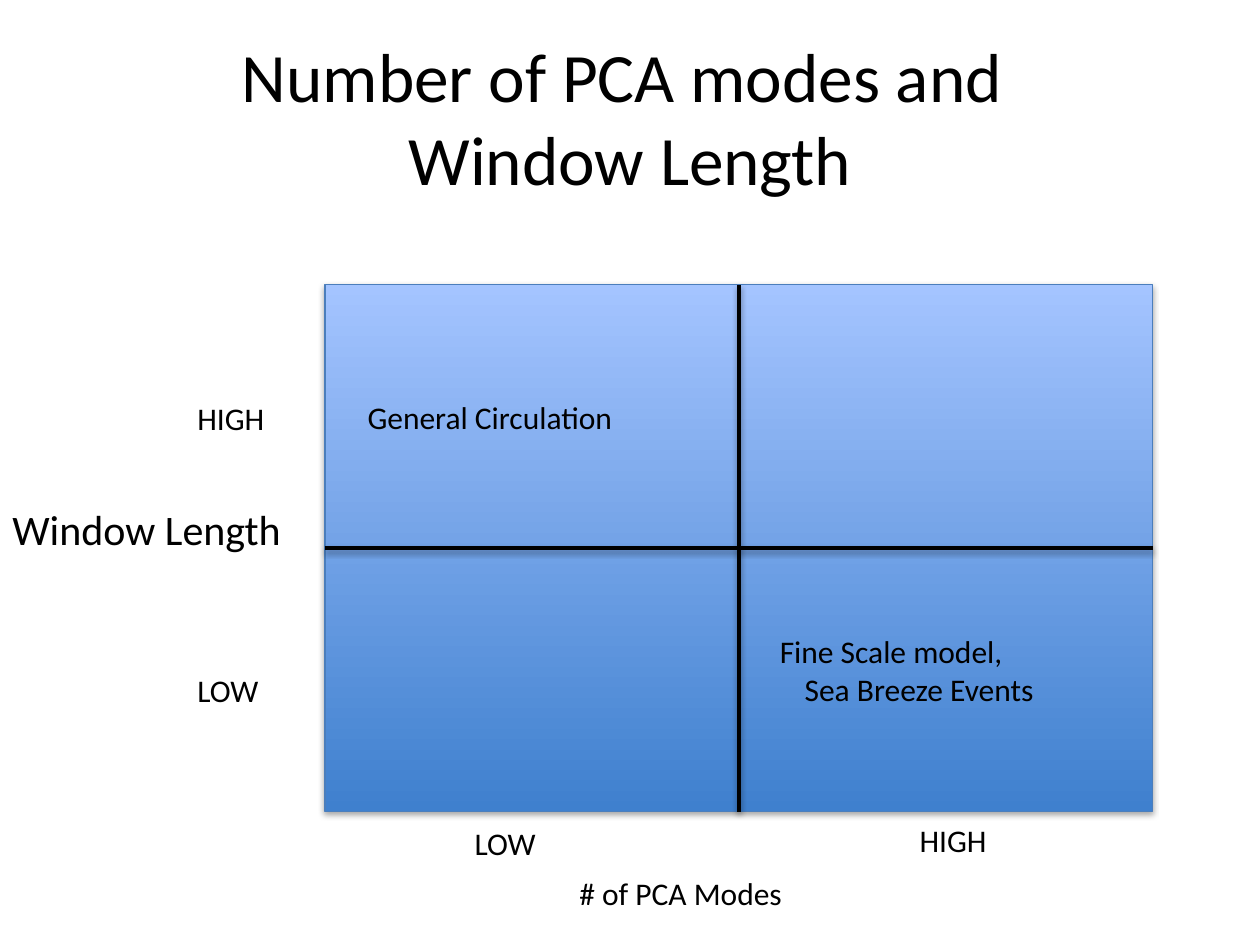
from dataclasses import dataclass

from lxml import etree
from pptx import Presentation
from pptx.dml.color import RGBColor
from pptx.enum.shapes import MSO_CONNECTOR, MSO_SHAPE
from pptx.enum.text import MSO_ANCHOR, MSO_AUTO_SIZE, PP_ALIGN
from pptx.oxml.ns import qn
from pptx.util import Cm, Pt

STRAIGHT = MSO_CONNECTOR.STRAIGHT
RECTANGLE = MSO_SHAPE.RECTANGLE
MIDDLE = MSO_ANCHOR.MIDDLE
FIT_TEXT = MSO_AUTO_SIZE.SHAPE_TO_FIT_TEXT
LEFT, CENTER = PP_ALIGN.LEFT, PP_ALIGN.CENTER
TOP_SIDE, LEFT_SIDE, BOTTOM_SIDE, RIGHT_SIDE = range(4)


@dataclass(frozen=True)
class Theme:
    font: str = "Calibri"
    ink: RGBColor = RGBColor(0x00, 0x00, 0x00)
    grid_bottom: RGBColor = RGBColor(0x3F, 0x80, 0xCE)
    grid_top: RGBColor = RGBColor(0xA4, 0xC4, 0xFF)
    grid_edge: RGBColor = RGBColor(0x4B, 0x7E, 0xBC)
    title: float = 39.6
    axis: float = 24
    label: float = 18


THEME = Theme()

# Left, top, width, height in cm
GRID = (6.55, 5.74, 16.69, 10.62)

# Text, left, top, width, height in cm, type size
LABELS = [
    ("# of PCA Modes", 11.43, 17.5, 4.65, 1.02, THEME.label),
    ("Window Length", 0, 10.03, 5.99, 1.27, THEME.axis),
    ("LOW", 9.32, 16.48, 1.78, 1.02, THEME.label),
    ("HIGH", 18.29, 16.43, 1.88, 1.02, THEME.label),
    ("LOW", 3.73, 13.41, 1.78, 1.02, THEME.label),
    ("HIGH", 3.73, 7.92, 1.88, 1.02, THEME.label),
    ("General Circulation", 7.16, 7.9, 5.51, 1.02, THEME.label),
]


def apply_format(target, values):
    for name, value in values.items():
        setattr(target, name, value)


def add_shadow(shape, opacity, distance):
    """Give a shape a soft black shadow that falls straight down."""
    properties = shape._element.spPr
    effects = properties.find(qn("a:effectLst"))
    if effects is None:
        effects = etree.SubElement(properties, qn("a:effectLst"))
    shadow = etree.SubElement(
        effects, qn("a:outerShdw"), blurRad=str(Pt(3.1)),
        dist=str(Pt(distance)), dir="5400000", rotWithShape="0")
    color = etree.SubElement(shadow, qn("a:srgbClr"), val="000000")
    etree.SubElement(color, qn("a:alpha"), val=str(opacity * 1000))


def add_text(page, paragraphs, area, size, **frame_format):
    """Add a text box from (text, alignment) pairs."""
    box = page.shapes.add_textbox(*map(Cm, area))
    frame = box.text_frame
    apply_format(frame, frame_format)
    for index, (text, alignment) in enumerate(paragraphs):
        para = frame.add_paragraph() if index else frame.paragraphs[0]
        para.text = text
        para.alignment = alignment
        for span in para.runs:
            apply_format(span.font, {"name": THEME.font, "size": Pt(size)})
            span.font.color.rgb = THEME.ink


def add_grid(page):
    grid = page.shapes.add_shape(RECTANGLE, *map(Cm, GRID))
    grid.shadow.inherit = False
    grid.fill.gradient()
    grid.fill.gradient_angle = 90
    stops = grid.fill.gradient_stops
    for stop, place, color in zip(
            stops, (0, 1), (THEME.grid_bottom, THEME.grid_top)):
        stop.position = place
        stop.color.rgb = color
    grid.line.color.rgb = THEME.grid_edge
    grid.line.width = Pt(0.75)
    add_shadow(grid, 35, 1.8)
    return grid


def add_divider(page, grid, start_side, end_side):
    """Join the middles of two opposite sides of the grid."""
    divider = page.shapes.add_connector(STRAIGHT, 0, 0, 0, 0)
    divider.begin_connect(grid, start_side)
    divider.end_connect(grid, end_side)
    divider.line.color.rgb = THEME.ink
    divider.line.width = Pt(2)
    add_shadow(divider, 38, 1.6)


def main():
    deck = Presentation()
    apply_format(deck, {"slide_width": Cm(25.4), "slide_height": Cm(19.05)})
    page = deck.slides.add_slide(deck.slide_layouts[6])

    # Title
    add_text(page, [("Number of PCA modes and \vWindow Length", CENTER)],
             (1.27, 0.76, 22.86, 3.18), THEME.title,
             word_wrap=True, vertical_anchor=MIDDLE)

    # Four quadrants
    grid = add_grid(page)
    add_divider(page, grid, TOP_SIDE, BOTTOM_SIDE)
    add_divider(page, grid, LEFT_SIDE, RIGHT_SIDE)

    # Axis names, levels and quadrant notes
    for text, *area, size in LABELS:
        add_text(page, [(text, LEFT)], area, size,
                 word_wrap=False, auto_size=FIT_TEXT)
    add_text(page, [("Fine Scale model,", LEFT), ("Sea Breeze Events", CENTER)],
             (15.47, 12.62, 6.12, 1.8), THEME.label,
             word_wrap=True, auto_size=FIT_TEXT)

    deck.save("out.pptx")


if __name__ == "__main__":
    main()
